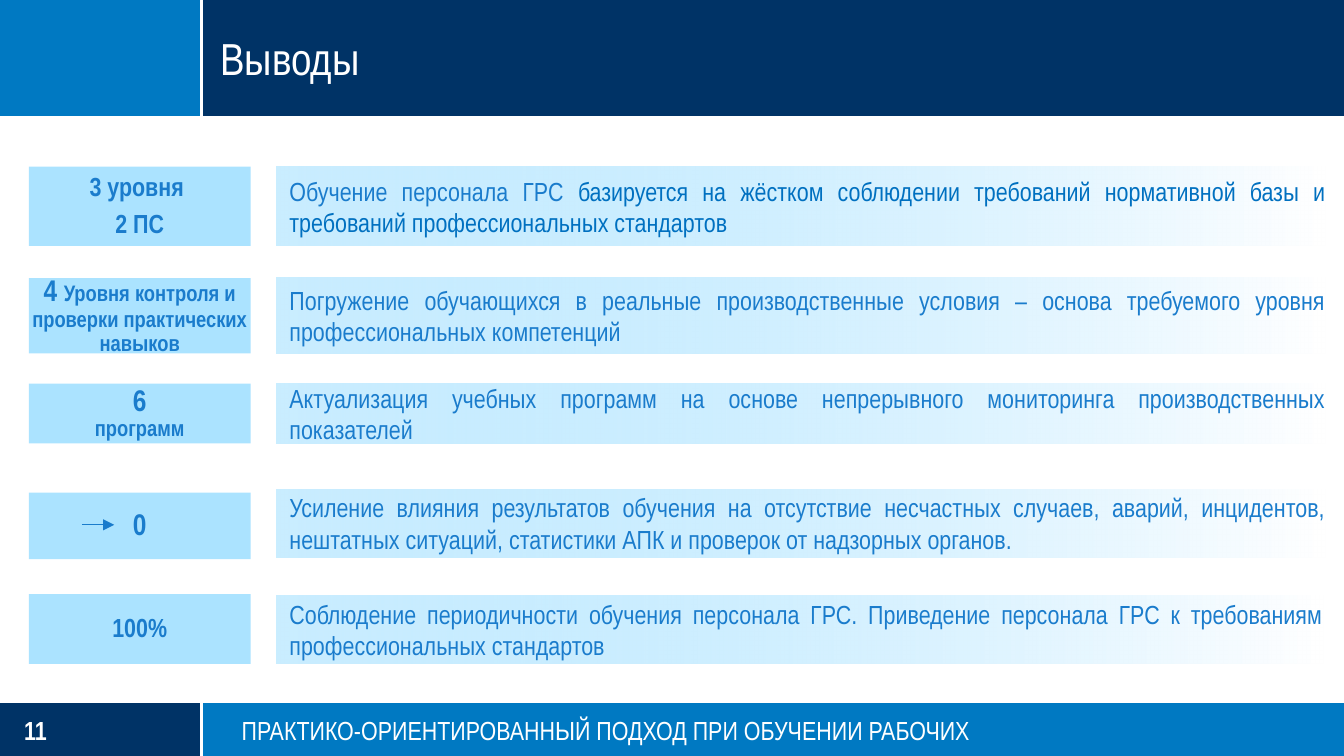
import dataclasses

import lxml.etree
import pptx
import pptx.dml.color
import pptx.enum.shapes
import pptx.enum.text
import pptx.oxml.ns
import pptx.util

PX = 4572
W, H = 2000, 1125
ALIGN = pptx.enum.text.PP_ALIGN
ANCHOR = pptx.enum.text.MSO_ANCHOR


@dataclasses.dataclass(frozen=True)
class Theme:
    font: str = "Arial Narrow"
    navy: str = "003366"
    blue: str = "0079C2"
    white: str = "FFFFFF"
    text: str = "1A7CCC"
    accent: str = "0070C0"
    label: str = "64CCFF"
    fade: str = "66CCFF"
    title: int = 24
    big: int = 16
    body: int = 14
    small: int = 12


T = Theme()


def rgb(c):
    return pptx.dml.color.RGBColor.from_string(c)


def emu(*lengths):
    return [v * PX for v in lengths]


def set_alpha(sp, *percents):
    colors = sp._element.spPr.iter(pptx.oxml.ns.qn("a:srgbClr"))
    for clr, percent in zip(colors, percents):
        alpha = lxml.etree.SubElement(clr, pptx.oxml.ns.qn("a:alpha"))
        alpha.set("val", str(percent * 1000))


def add_rect(s, box, color=None):
    sp = s.shapes.add_shape(pptx.enum.shapes.MSO_SHAPE.RECTANGLE, *emu(*box))
    sp.shadow.inherit = False
    sp.line.fill.background()
    if color:
        sp.fill.solid()
        sp.fill.fore_color.rgb = rgb(color)
    return sp


def add_line(s, x1, y1, x2, y2, color, width):
    cx = s.shapes.add_connector(
        pptx.enum.shapes.MSO_CONNECTOR.STRAIGHT, *emu(x1, y1, x2, y2))
    cx.line.color.rgb = rgb(color)
    cx.line.width = pptx.util.Pt(width)
    lxml.etree.SubElement(cx._element.spPr, pptx.oxml.ns.qn("a:effectLst"))
    return cx


def write(sp, paragraphs, margins=(0, 0, 0, 0), anchor=ANCHOR.MIDDLE,
          align=ALIGN.LEFT, bold=False, spacing=None, after=0):
    tf = sp.text_frame
    tf.word_wrap = True
    tf.vertical_anchor = anchor
    tf.margin_left, tf.margin_top, tf.margin_right, tf.margin_bottom = emu(*margins)
    for i, runs in enumerate(paragraphs):
        p = tf.add_paragraph() if i else tf.paragraphs[0]
        p.alignment = align
        p.space_after = pptx.util.Pt(after)
        if spacing:
            p.line_spacing = spacing
        for text, size, color in runs:
            r = p.add_run()
            r.text = text
            r.font.name = T.font
            r.font.size = pptx.util.Pt(size)
            r.font.bold = bold
            r.font.color.rgb = rgb(color)


def add_text(s, box, text, size, **options):
    sp = s.shapes.add_textbox(*emu(*box))
    write(sp, [[(text, size, T.white)]], **options)


def add_header(s, x, y, w, h):
    add_rect(s, (x, y, w, h), T.navy)
    add_rect(s, (x, y, 301, h), T.blue)
    add_line(s, x + 300, y, x + 300, y + h + 1, T.white, 1.25)
    add_line(s, x, y + h + 1, x + w, y + h + 1, T.white, 1.25)
    add_text(s, (x + 328, y, w - 328, h - 2), "Выводы", T.title)


def add_footer(s, x, y, w, h):
    add_rect(s, (x, y, w, h), T.blue)
    add_rect(s, (x, y, 301, h), T.navy)
    add_line(s, x, y - 1, x + w, y - 1, T.white, 1.25)
    add_line(s, x + 300, y - 1, x + 300, y + h, T.white, 1.25)
    add_text(s, (x + 36, y + 17, 202, 48), "11", T.body, bold=True)
    add_text(s, (x + 340, y + 8, w - 340, 68),
             "ПРАКТИКО-ОРИЕНТИРОВАННЫЙ ПОДХОД ПРИ ОБУЧЕНИИ РАБОЧИХ",
             T.body, margins=(20, 10, 20, 10), anchor=ANCHOR.TOP)


def add_label(s, x, y, w, h, lines, after):
    sp = add_rect(s, (x, y, w, h), T.label)
    set_alpha(sp, 54)
    write(sp, [[(text, size, T.text) for text, size in line] for line in lines],
          margins=(2, 2, 2, 2), align=ALIGN.CENTER, bold=True,
          spacing=0.9, after=after)


def add_conclusion(s, x, y, w, h, runs):
    sp = add_rect(s, (x, y, w, h))
    sp.fill.gradient()
    sp.fill.gradient_angle = 0
    for stop, color, position in zip(sp.fill.gradient_stops, (T.fade, T.white), (0, 1)):
        stop.color.rgb = rgb(color)
        stop.position = position
    set_alpha(sp, 35, 82)
    write(sp, [[(text, T.body, color) for text, color in runs]],
          margins=(20, 0, 0, 0), align=ALIGN.JUSTIFY)


def add_arrow(s, x, y, w):
    cx = add_line(s, x, y, x + w, y, T.text, 0.75)
    tail = lxml.etree.SubElement(cx.line._get_or_add_ln(), pptx.oxml.ns.qn("a:tailEnd"))
    tail.set("type", "triangle")


ROWS = [
    ((248, 118), (248, 118), 1562, 5,
     [[("3 уровня ", T.body)], [("2 ПС", T.body)]],
     [("Обучение персонала ГРС ", T.text),
      ("базируется на жёстком соблюдении требований нормативной базы и "
       "требований профессиональных стандартов", T.accent)]),
    ((414, 112), (413, 113), 1562, 0,
     [[("4 ", T.big), ("Уровня контроля и проверки практических навыков", T.small)]],
     [("Погружение обучающихся в реальные производственные условия – основа "
       "требуемого уровня профессиональных компетенций ", T.text)]),
    ((571, 89), (571, 89), 1562, 0,
     [[("6", T.big)], [("программ", T.small)]],
     [("Актуализация учебных программ на основе непрерывного мониторинга "
       "производственных показателей", T.text)]),
    ((733, 99), (728, 101), 1562, 5,
     [[("0", T.big)]],
     [("Усиление влияния результатов обучения на отсутствие несчастных случаев, "
       "аварий, инцидентов, нештатных ситуаций, статистики АПК и проверок от "
       "надзорных органов. ", T.text)]),
    ((884, 104), (886, 102), 1558, 5,
     [[("100%", T.body)]],
     [("Соблюдение периодичности обучения персонала ГРС. Приведение персонала "
       "ГРС к требованиям профессиональных стандартов ", T.text)]),
]


def main():
    prs = pptx.Presentation()
    prs.slide_width, prs.slide_height = emu(W, H)
    s = prs.slides.add_slide(prs.slide_layouts[6])
    add_footer(s, 0, 1046, W, H - 1046)
    add_header(s, 0, 0, W, 174)
    for (label_y, label_h), (y, h), w, after, lines, runs in ROWS:
        add_label(s, 43, label_y, 330, label_h, lines, after)
        add_conclusion(s, 411, y, w, h, runs)
    add_arrow(s, 122, 781, 48)
    prs.save("out.pptx")


if __name__ == "__main__":
    main()
